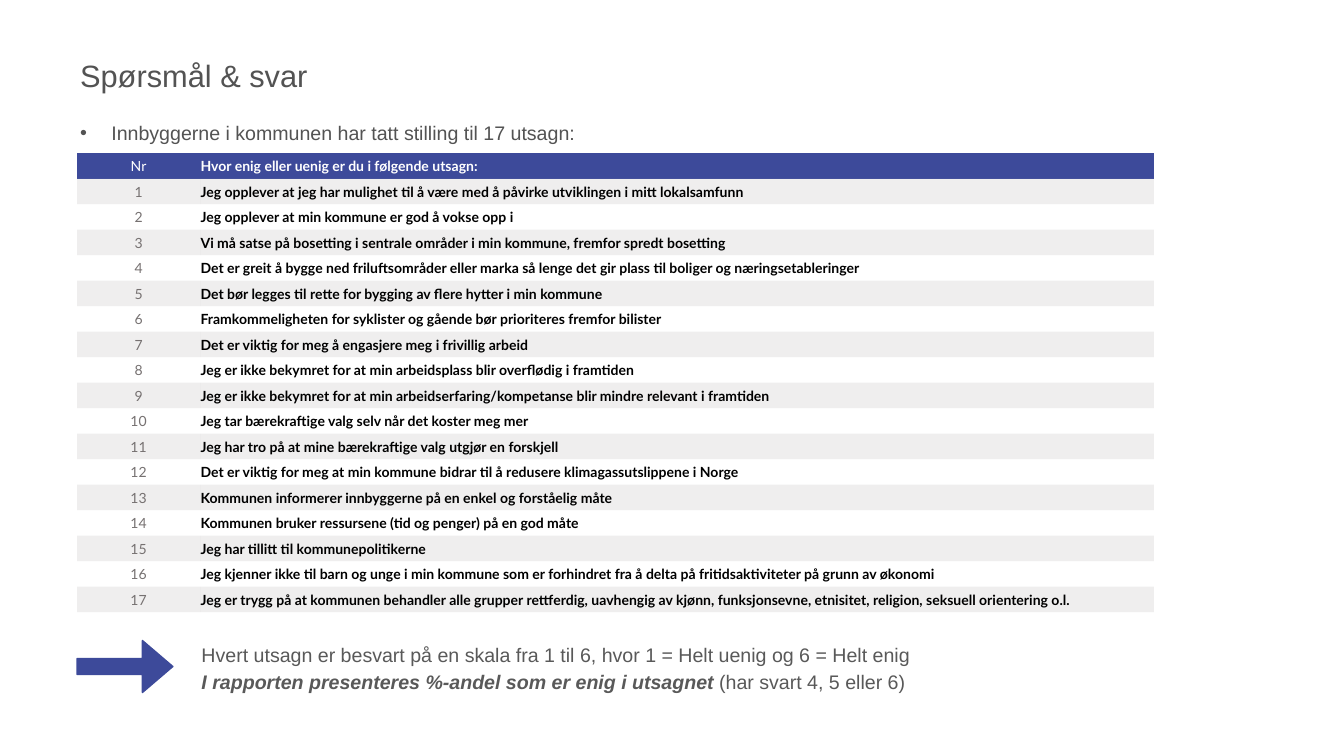
"""Build the slide listing the 17 survey statements and their answer scale."""
import pptx
import pptx.dml.color
import pptx.enum.shapes
import pptx.enum.text
import pptx.oxml.ns
import pptx.util
from lxml import etree

Inches = pptx.util.Inches
Pt = pptx.util.Pt
ANCHOR = pptx.enum.text.MSO_ANCHOR
ALIGN = pptx.enum.text.PP_ALIGN
qn = pptx.oxml.ns.qn

COLORS = {
    "heading": "535353",
    "note": "595959",
    "accent": "3D4A9A",
    "band": "AFABAB",
    "number": "767171",
    "statement": "000000",
    "white": "FFFFFF",
}
PLAIN_TABLE_STYLE = "{2D5ABB26-0587-4C30-8999-92F81FD0307C}"
HEADER = ("Nr", "Hvor enig eller uenig er du i følgende utsagn:")
STATEMENTS = [
    "Jeg opplever at jeg har mulighet til å være med å påvirke utviklingen i mitt lokalsamfunn",
    "Jeg opplever at min kommune er god å vokse opp i",
    "Vi må satse på bosetting i sentrale områder i min kommune, fremfor spredt bosetting",
    "Det er greit å bygge ned friluftsområder eller marka så lenge det gir plass til boliger og næringsetableringer",
    "Det bør legges til rette for bygging av flere hytter i min kommune",
    "Framkommeligheten for syklister og gående bør prioriteres fremfor bilister",
    "Det er viktig for meg å engasjere meg i frivillig arbeid",
    "Jeg er ikke bekymret for at min arbeidsplass blir overflødig i framtiden",
    "Jeg er ikke bekymret for at min arbeidserfaring/kompetanse blir mindre relevant i framtiden",
    "Jeg tar bærekraftige valg selv når det koster meg mer",
    "Jeg har tro på at mine bærekraftige valg utgjør en forskjell",
    "Det er viktig for meg at min kommune bidrar til å redusere klimagassutslippene i Norge",
    "Kommunen informerer innbyggerne på en enkel og forståelig måte",
    "Kommunen bruker ressursene (tid og penger) på en god måte",
    "Jeg har tillitt til kommunepolitikerne",
    "Jeg kjenner ikke til barn og unge i min kommune som er forhindret fra å delta på fritidsaktiviteter på grunn av økonomi",
    "Jeg er trygg på at kommunen behandler alle grupper rettferdig, uavhengig av kjønn, funksjonsevne, etnisitet, religion, seksuell orientering o.l.",
]


def rgb(name):
    """Return the named palette colour."""
    return pptx.dml.color.RGBColor.from_string(COLORS[name])


def set_font(paragraph, face, size, color, bold=None):
    """Set the font shared by all runs of a paragraph."""
    font = paragraph.font
    font.name, font.size, font.bold = face, Pt(size), bold
    font.color.rgb = rgb(color)


def add_text_frame(slide, left, top, width, height, inset=None):
    """Add a wrapping text box, centred vertically if it has an even inset."""
    box = slide.shapes.add_textbox(Inches(left), Inches(top), Inches(width), Inches(height))
    frame = box.text_frame
    frame.word_wrap = True
    if inset is not None:
        frame.vertical_anchor = ANCHOR.MIDDLE
        frame.margin_left = frame.margin_right = Inches(inset)
        frame.margin_top = frame.margin_bottom = Inches(inset)
    return frame


def add_heading(slide):
    """Add the slide heading."""
    heading = add_text_frame(slide, 1.53, 0.47, 23.66, 2.04, 0.06).paragraphs[0]
    heading.text = "Spørsmål & svar"
    set_font(heading, "Arial", 44, "heading")


def add_intro(slide):
    """Add the bulleted introduction above the table."""
    intro = add_text_frame(slide, 1.53, 1.95, 22.59, 1.38, 0.06).paragraphs[0]
    intro.text = "Innbyggerne i kommunen har tatt stilling til 17 utsagn:"
    properties = intro._p.get_or_add_pPr()
    properties.set("marL", str(Inches(0.62)))
    properties.set("indent", str(-Inches(0.62)))
    etree.SubElement(properties, qn("a:buFont"), typeface="Arial")
    etree.SubElement(properties, qn("a:buChar"), char="•")
    set_font(intro, "Arial", 28, "heading")


def fill_cell(cell, color, opacity=100):
    """Fill a table cell, with opacity in percent."""
    cell.fill.solid()
    cell.fill.fore_color.rgb = rgb(color)
    if opacity < 100:
        tint = cell._tc.tcPr.find(".//" + qn("a:srgbClr"))
        etree.SubElement(tint, qn("a:alpha"), val=str(opacity * 1000))


def write_cell(cell, text, color, bold, align):
    """Write one line of text into a table cell."""
    cell.vertical_anchor = ANCHOR.MIDDLE
    cell.margin_left = cell.margin_right = cell.margin_top = Inches(0.01)
    cell.margin_bottom = 0
    line = cell.text_frame.paragraphs[0]
    line.text = text
    line.alignment = align
    set_font(line, "Lato", 20, color, bold)


def add_statement_table(slide):
    """Add the numbered statements under a coloured header row."""
    rows = [HEADER] + [(str(nr), text) for nr, text in enumerate(STATEMENTS, 1)]
    frame = slide.shapes.add_table(
        len(rows), 2, Inches(1.53), Inches(3.04), Inches(21.37), Inches(9.11))
    table = frame.table
    table.horz_banding = False
    table._tbl.tblPr.find(qn("a:tableStyleId")).text = PLAIN_TABLE_STYLE
    table.columns[0].width, table.columns[1].width = Inches(2.44), Inches(18.93)
    for index, (number, statement) in enumerate(rows):
        number_cell, statement_cell = table.cell(index, 0), table.cell(index, 1)
        is_header = index == 0
        write_cell(number_cell, number, "white" if is_header else "number", False, ALIGN.CENTER)
        write_cell(statement_cell, statement, "white" if is_header else "statement", True, ALIGN.LEFT)
        for cell in (number_cell, statement_cell):
            if is_header:
                fill_cell(cell, "accent")
            elif index % 2:
                fill_cell(cell, "band", 20)
            else:
                cell.fill.background()


def add_scale_note(slide):
    """Add the explanation of the answer scale."""
    note = add_text_frame(slide, 3.9, 12.7, 19.02, 1.13)
    scale = note.paragraphs[0]
    scale.text = "Hvert utsagn er besvart på en skala fra 1 til 6, hvor 1 = Helt uenig og 6 = Helt enig"
    share = note.add_paragraph()
    share.space_before = Pt(6)
    emphasis = share.add_run()
    emphasis.text = "I rapporten presenteres %-andel som er enig i utsagnet "
    emphasis.font.bold = emphasis.font.italic = True
    share.add_run().text = "(har svart 4, 5 eller 6)"
    for paragraph in (scale, share):
        set_font(paragraph, "Arial", 28, "note")


def add_note_arrow(slide):
    """Add the arrow pointing at the scale note."""
    arrow = slide.shapes.add_shape(
        pptx.enum.shapes.MSO_SHAPE.RIGHT_ARROW,
        Inches(1.53), Inches(12.71), Inches(1.9), Inches(1.03))
    arrow.adjustments[0], arrow.adjustments[1] = 0.305, 0.585
    arrow.shadow.inherit = False
    arrow.fill.solid()
    arrow.fill.fore_color.rgb = rgb("accent")
    arrow.line.color.rgb = rgb("accent")
    arrow.line.width = Pt(2)


def main():
    """Build and save the presentation."""
    deck = pptx.Presentation()
    deck.slide_width, deck.slide_height = Inches(26.67), Inches(15)
    slide = deck.slides.add_slide(deck.slide_layouts[6])
    add_heading(slide)
    add_intro(slide)
    add_statement_table(slide)
    add_scale_note(slide)
    add_note_arrow(slide)
    deck.save("out.pptx")


if __name__ == "__main__":
    main()
